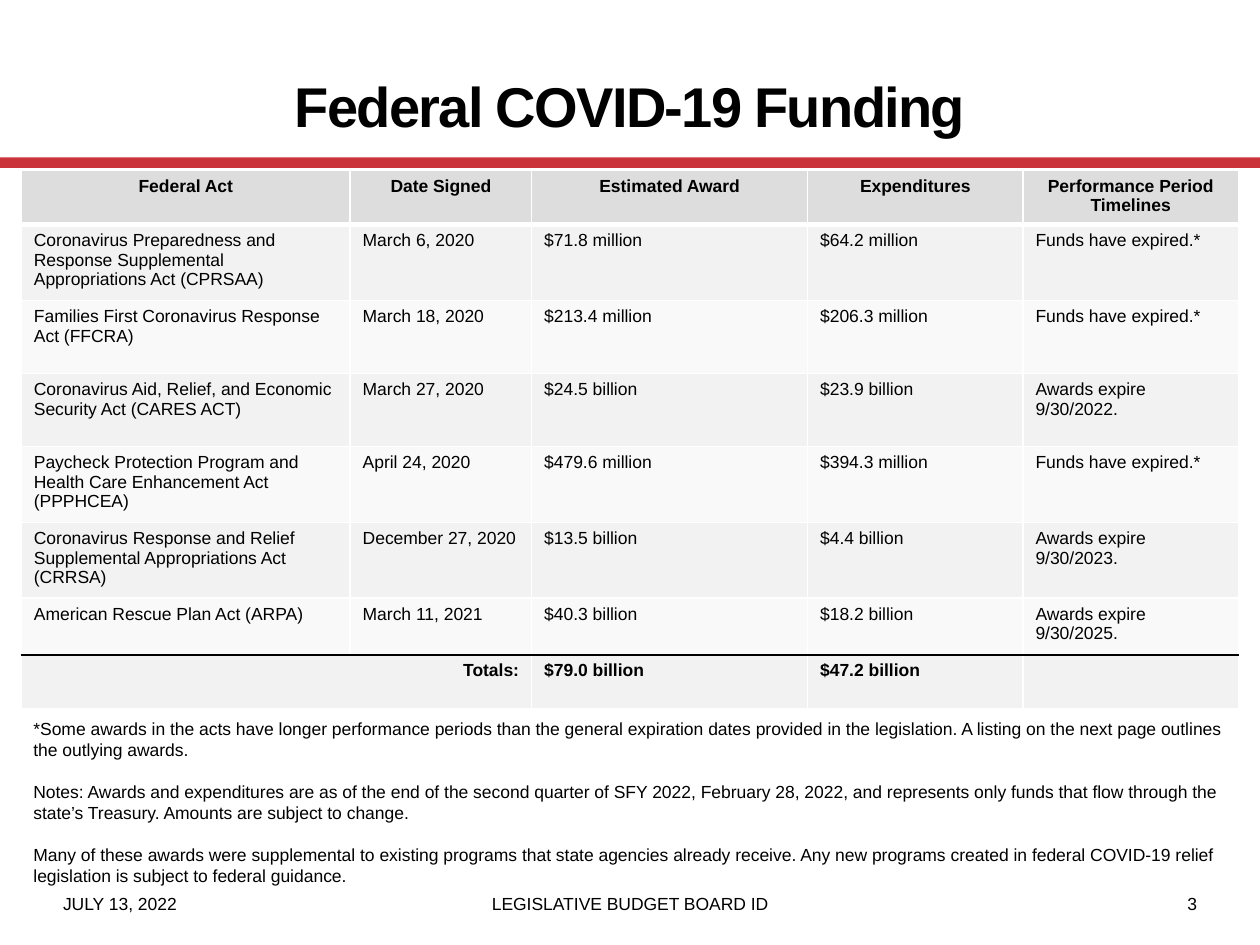
from lxml import etree
from pptx import Presentation
from pptx.dml.color import RGBColor
from pptx.enum import shapes, text
from pptx.oxml import ns
from pptx.util import Pt

BLACK = RGBColor(0x00, 0x00, 0x00)
WHITE = RGBColor(0xFF, 0xFF, 0xFF)
RED = RGBColor(0xCB, 0x33, 0x3B)
HEADER_GRAY = RGBColor(0xDD, 0xDD, 0xDD)
BANDS = (RGBColor(0xF2, 0xF2, 0xF2), RGBColor(0xF9, 0xF9, 0xF9))
LEFT, CENTER, RIGHT = (text.PP_ALIGN.LEFT, text.PP_ALIGN.CENTER, text.PP_ALIGN.RIGHT)

HEADINGS = ("Federal Act", "Date Signed", "Estimated Award", "Expenditures",
            "Performance Period Timelines")
ACTS = (
    ("Coronavirus Preparedness and Response Supplemental Appropriations Act (CPRSAA)",
     "March 6, 2020", "$71.8 million", "$64.2 million", "Funds have expired.*"),
    ("Families First Coronavirus Response Act (FFCRA)",
     "March 18, 2020", "$213.4 million", "$206.3 million", "Funds have expired.*"),
    ("Coronavirus Aid, Relief, and Economic Security Act (CARES ACT)",
     "March 27, 2020", "$24.5 billion", "$23.9 billion", "Awards expire 9/30/2022."),
    ("Paycheck Protection Program and Health Care Enhancement Act (PPPHCEA)",
     "April 24, 2020", "$479.6 million", "$394.3 million", "Funds have expired.*"),
    ("Coronavirus Response and Relief Supplemental Appropriations Act (CRRSA)",
     "December 27, 2020", "$13.5 billion", "$4.4 billion", "Awards expire 9/30/2023."),
    ("American Rescue Plan Act (ARPA)",
     "March 11, 2021", "$40.3 billion", "$18.2 billion", "Awards expire 9/30/2025."),
)
TOTALS = ("Totals:", "", "$79.0 billion", "$47.2 billion", "")
COLUMN_WIDTHS = (187.9, 103.7, 157.7, 123.1, 123.1)
ROW_HEIGHTS = (30.2, *[41.76] * 5, 32.4, 31)
NOTES = (
    "*Some awards in the acts have longer performance periods than the general expiration "
    "dates provided in the legislation. A listing on the next page outlines the outlying awards.",
    "Notes: Awards and expenditures are as of the end of the second quarter of SFY 2022, "
    "February 28, 2022, and represents only funds that flow through the state’s Treasury. "
    "Amounts are subject to change.",
    "Many of these awards were supplemental to existing programs that state agencies already "
    "receive. Any new programs created in federal COVID-19 relief legislation is subject to "
    "federal guidance.",
)


def add_span(para, words, size=10, bold=False, align=LEFT):
    para.alignment = align
    span = para.add_run()
    span.text = words
    font = span.font
    font.name, font.size, font.bold = "Arial", Pt(size), bold
    font.color.rgb = BLACK
    return span


def place_title(page, left, top, width, height):
    title = page.shapes.title
    title.left, title.top, title.width, title.height = map(Pt, (left, top, width, height))
    title.text_frame.vertical_anchor = text.MSO_ANCHOR.MIDDLE
    span = add_span(title.text_frame.paragraphs[0], "Federal COVID-19 Funding", 32, True, CENTER)
    span._r.get_or_add_rPr().set("spc", "-100")


def add_rule(page, left, top, width, height):
    rule = page.shapes.add_shape(shapes.MSO_SHAPE.RECTANGLE, *map(Pt, (left, top, width, height)))
    rule.shadow.inherit = False
    rule.fill.solid()
    rule.fill.fore_color.rgb = RED
    rule.line.fill.background()


def set_borders(cell, top, bottom):
    """Draw white sides, with top and bottom given as (colour, points)."""
    properties = cell._tc.get_or_add_tcPr()
    side = (WHITE, 1)
    for tag, (color, width) in zip(("lnL", "lnR", "lnT", "lnB"), (side, side, top, bottom)):
        line = etree.SubElement(properties, ns.qn(f"a:{tag}"), w=str(Pt(width)))
        fill = etree.SubElement(line, ns.qn("a:solidFill"))
        etree.SubElement(fill, ns.qn("a:srgbClr"), val=str(color))


def add_funding_table(page, left, top):
    rows = (HEADINGS, *ACTS, TOTALS)
    last = len(rows) - 1
    table = page.shapes.add_table(
        len(rows), len(HEADINGS), Pt(left), Pt(top),
        Pt(sum(COLUMN_WIDTHS)), Pt(sum(ROW_HEIGHTS))).table
    for column, width in zip(table.columns, COLUMN_WIDTHS):
        column.width = Pt(width)
    for row, height in zip(table.rows, ROW_HEIGHTS):
        row.height = Pt(height)

    # Each entry is the line above the row with the same index.
    edges = [(WHITE, 1)] * (len(rows) + 1)
    edges[1] = (WHITE, 3)
    edges[last] = (BLACK, 1)
    for r, row in enumerate(rows):
        for c, words in enumerate(row):
            cell = table.cell(r, c)
            set_borders(cell, edges[r], edges[r + 1])
            cell.fill.solid()
            cell.fill.fore_color.rgb = BANDS[(r - 1) % 2] if r else HEADER_GRAY
            if words:
                align = CENTER if r == 0 else RIGHT if words == "Totals:" else LEFT
                add_span(cell.text_frame.paragraphs[0], words, bold=r in (0, last), align=align)
    table.cell(last, 0).merge(table.cell(last, 1))


def add_notes(page, left, top, width, height):
    frame = page.shapes.add_textbox(*map(Pt, (left, top, width, height))).text_frame
    frame.word_wrap = True
    for index, note in enumerate(NOTES):
        para = frame.add_paragraph() if index else frame.paragraphs[0]
        para.line_spacing = Pt(12)
        para.space_before = Pt(12 if index else 0)
        add_span(para, note)


def add_footer(page, left, top, width, height):
    side = 168
    middle = width - 2 * side
    parts = (("JULY 13, 2022", 0, side, LEFT),
             ("LEGISLATIVE BUDGET BOARD ID", side, middle, CENTER),
             ("3", side + middle, side, RIGHT))
    for words, offset, part_width, align in parts:
        box = page.shapes.add_textbox(Pt(left + offset), Pt(top), Pt(part_width), Pt(height))
        frame = box.text_frame
        frame.word_wrap = True
        frame.margin_left = frame.margin_right = frame.margin_top = frame.margin_bottom = 0
        add_span(frame.paragraphs[0], words, align=align)


def main():
    deck = Presentation()
    deck.slide_width, deck.slide_height = Pt(720), Pt(540)
    page = deck.slides.add_slide(deck.slide_layouts.get_by_name("Title Only"))
    add_rule(page, 0, 90, 720, 6)
    add_footer(page, 36, 510, 648, 29)
    place_title(page, 36, 18, 648, 84)
    add_funding_table(page, 12.2, 97.2)
    add_notes(page, 12, 406.8, 696, 128)
    deck.save("out.pptx")


if __name__ == "__main__":
    main()
